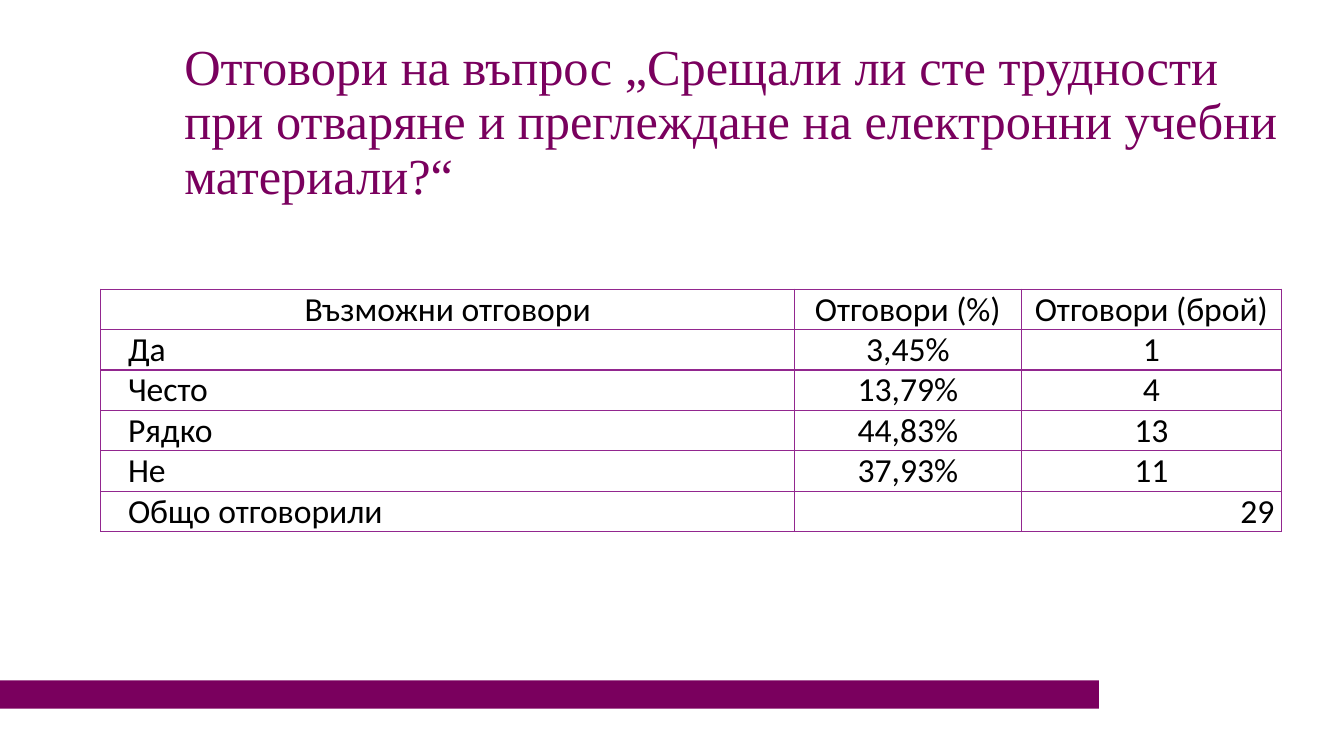
from pptx import Presentation
from pptx.dml.color import RGBColor
from pptx.enum.shapes import MSO_SHAPE
from pptx.enum.text import MSO_ANCHOR, PP_ALIGN as ALIGN
from pptx.oxml import parse_xml
from pptx.oxml.ns import nsdecls
from pptx.util import Inches, Pt

# Content
QUESTION = ("Отговори на въпрос „Срещали ли сте трудности при отваряне и "
            "преглеждане на електронни учебни материали?“")
HEADER = ("Възможни отговори", "Отговори (%)", "Отговори (брой)")
ANSWERS = [
    ("Да", "3,45%", "1"),
    ("Често", "13,79%", "4"),
    ("Рядко", "44,83%", "13"),
    ("Не", "37,93%", "11"),
]
TOTAL = ("Общо отговорили", "", "29")

# Layout and colours
COLUMN_WIDTHS = (6.88, 2.25, 2.58)
ROW_HEIGHT = 0.4
PURPLE, BORDER, BLACK = "7A005E", "92278F", "000000"


def color(hex_code):
    return RGBColor.from_string(hex_code)


def write(frame, text, font="Calibri", size=24, ink=BLACK, align=ALIGN.LEFT,
          spacing=1.0, indent=0):
    frame.word_wrap = True
    paragraph = frame.paragraphs[0]
    paragraph.alignment = align
    paragraph.line_spacing = spacing
    if indent:
        properties = paragraph._p.get_or_add_pPr()
        properties.set("marL", "0")
        properties.set("indent", str(Inches(indent)))
    paragraph.font.size = Pt(size)
    if text:
        run = paragraph.add_run()
        run.text = text
        run.font.name, run.font.size = font, Pt(size)
        run.font.color.rgb = color(ink)


def add_borders(cell):
    properties = cell._tc.get_or_add_tcPr()
    for position, side in enumerate(("lnL", "lnR", "lnT", "lnB")):
        properties.insert(position, parse_xml(
            f'<a:{side} {nsdecls("a")} w="{Pt(1)}"><a:solidFill>'
            f'<a:srgbClr val="{BORDER}"/></a:solidFill></a:{side}>'))


def answer_format(row, column):
    if row == 0:
        return {"align": ALIGN.CENTER}
    if column == 0:
        return {"indent": 0.2}
    return {"align": ALIGN.RIGHT if row > len(ANSWERS) else ALIGN.CENTER}


prs = Presentation()
prs.slide_width, prs.slide_height = Inches(13.33), Inches(7.5)
slide = prs.slides.add_slide(prs.slide_layouts[6])

# Bottom band
band = slide.shapes.add_shape(MSO_SHAPE.RECTANGLE, 0, Inches(6.75),
                              Inches(10.9), Inches(0.28))
band.shadow.inherit = False
band.fill.solid()
band.fill.fore_color.rgb = color(PURPLE)
band.line.fill.background()

# Question
question = slide.shapes.add_textbox(Inches(1.73), Inches(0.5),
                                    Inches(11.3), Inches(1.45)).text_frame
question.vertical_anchor = MSO_ANCHOR.MIDDLE
write(question, QUESTION, font="Times New Roman", size=36, ink=PURPLE, spacing=0.9)

# Answer table
rows = [HEADER, *ANSWERS, TOTAL]
table = slide.shapes.add_table(
    len(rows), len(HEADER), Inches(1), Inches(2.87),
    Inches(sum(COLUMN_WIDTHS)), Inches(ROW_HEIGHT * len(rows))).table
table.first_row = table.horz_banding = False
for column, width in zip(table.columns, COLUMN_WIDTHS):
    column.width = Inches(width)
for r, values in enumerate(rows):
    for c, value in enumerate(values):
        cell = table.cell(r, c)
        cell.fill.background()
        cell.margin_left = cell.margin_right = Inches(0.07)
        cell.margin_top = cell.margin_bottom = 0
        cell.vertical_anchor = MSO_ANCHOR.MIDDLE if r == 0 else MSO_ANCHOR.TOP
        write(cell.text_frame, value, **answer_format(r, c))
        add_borders(cell)

prs.save("out.pptx")
